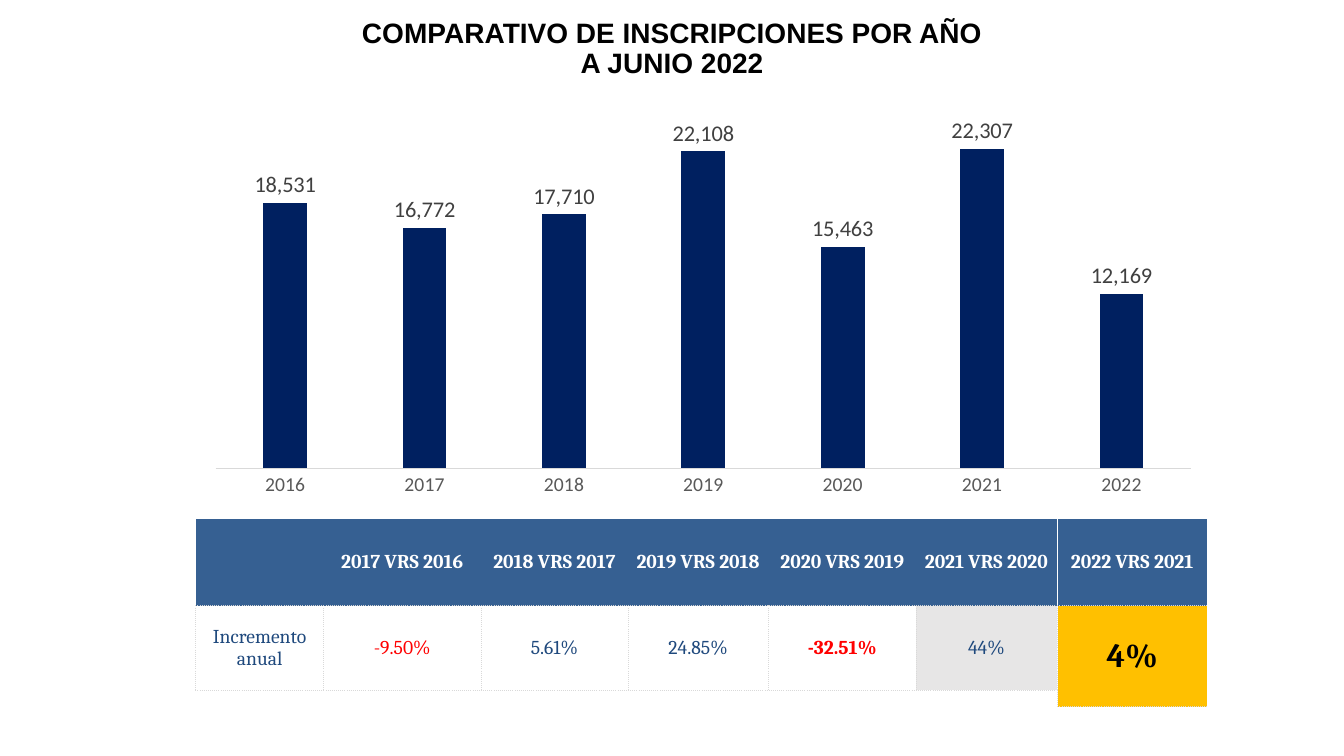
from lxml import etree
from pptx import Presentation, util as u
from pptx.chart.data import CategoryChartData
from pptx.dml.color import RGBColor
from pptx.enum import chart as ch, text as tx
from pptx.oxml import parse_xml
from pptx.oxml.ns import qn

NAVY, BLUE, INK, RED = "002060", "366092", "1F497D", "FF0000"
WHITE, BLACK, RULE = "FFFFFF", "000000", "D9D9D9"
NS = "http://schemas.openxmlformats.org/drawingml/2006/main"
NO_STYLE = "{2D5ABB26-0587-4C30-8999-92F81FD0307C}"


def style(font, name, size, color, bold=False):
    font.name, font.size, font.bold = name, u.Pt(size), bold
    font.color.rgb = RGBColor.from_string(color)


def put(cell, words, color, bold, fill, sides, size=14):
    """Write one table cell with dotted rules on the given sides."""
    for side in sides:
        cell._tc.get_or_add_tcPr().append(parse_xml(
            f'<a:ln{side} xmlns:a="{NS}" w="6350"><a:solidFill><a:srgbClr val="{RULE}"/>'
            f'</a:solidFill><a:prstDash val="sysDot"/></a:ln{side}>'))
    if fill:
        cell.fill.solid()
        cell.fill.fore_color.rgb = RGBColor.from_string(fill)
    else:
        cell.fill.background()
    cell.margin_left = cell.margin_right = cell.margin_top = cell.margin_bottom = 0
    cell.vertical_anchor = tx.MSO_ANCHOR.MIDDLE
    if words:
        par = cell.text_frame.paragraphs[0]
        par.alignment = tx.PP_ALIGN.CENTER
        run = par.add_run()
        run.text = words
        style(run.font, "Cambria", size, color, bold)


deck = Presentation()
deck.slide_width, deck.slide_height = u.Inches(13.33), u.Inches(7.5)
slide = deck.slides.add_slide(deck.slide_layouts[5])

# Title
title = slide.shapes.title
title.left, title.top = u.Inches(1.5), u.Inches(0.14)
title.width, title.height = u.Inches(10.33), u.Inches(0.47)
frame = title.text_frame
frame.vertical_anchor = tx.MSO_ANCHOR.TOP
frame.auto_size = tx.MSO_AUTO_SIZE.NONE
par = frame.paragraphs[0]
par.alignment, par.line_spacing = tx.PP_ALIGN.CENTER, 0.9
for num, line in enumerate(["COMPARATIVO DE INSCRIPCIONES POR AÑO", "A JUNIO 2022"]):
    if num:
        par.add_line_break()
    run = par.add_run()
    run.text = line
    style(run.font, "Arial", 20, BLACK, True)

# Enrolments per year
data = CategoryChartData(number_format="#,##0")
data.categories = [str(year) for year in range(2016, 2023)]
data.add_series("Inscripciones", [18531, 16772, 17710, 22108, 15463, 22307, 12169])
chart = slide.shapes.add_chart(
    ch.XL_CHART_TYPE.COLUMN_CLUSTERED, u.Inches(1.52), u.Inches(0.8),
    u.Inches(10.3), u.Inches(4.18), data).chart
chart.has_legend = chart.has_title = False
style(chart.font, "Calibri", 10, BLACK)

years = chart.category_axis
years.major_tick_mark = ch.XL_TICK_MARK.NONE
years.format.line.color.rgb = RGBColor.from_string(RULE)
years.format.line.width = u.Pt(0.75)
style(years.tick_labels.font, "Calibri", 14, "595959")
scale = chart.value_axis
scale.minimum_scale, scale.maximum_scale = 0, 25000
scale.has_major_gridlines = scale.visible = False

plot = chart.plots[0]
plot.gap_width, plot.overlap, plot.vary_by_categories = 219, -27, False
bars = plot.series[0]
bars.format.fill.solid()
bars.format.fill.fore_color.rgb = RGBColor.from_string(NAVY)
tags = bars.data_labels
tags.show_value = True
tags.number_format, tags.number_format_is_linked = "#,##0", False
tags.position = ch.XL_LABEL_POSITION.OUTSIDE_END
style(tags.font, "Calibri", 16, "404040")

area = chart._chartSpace.chart.plotArea
for old in area.findall(qn("c:layout")):
    area.remove(old)
layout = etree.Element(qn("c:layout"))
manual = etree.SubElement(layout, qn("c:manualLayout"))
for key, val in [("layoutTarget", "inner"), ("xMode", "edge"), ("yMode", "edge"),
                 ("x", 0.06), ("y", 0.07), ("w", 0.94), ("h", 0.85)]:
    etree.SubElement(manual, qn("c:" + key)).set("val", str(val))
area.insert(0, layout)

# Yearly change: the main table, and the current year set apart
ALL, OPEN = "LRTB", "LTB"
past = [
    (1.27, "", ("Incremento anual", INK, False, None, ALL)),
    (1.56, "2017 VRS 2016", ("-9.50%", RED, False, None, ALL)),
    (1.46, "2018 VRS 2017", ("5.61%", INK, False, None, ALL)),
    (1.39, "2019 VRS 2018", ("24.85%", INK, False, None, ALL)),
    (1.47, "2020 VRS 2019", ("-32.51%", RED, True, None, ALL)),
    (1.39, "2021 VRS 2020", ("44%", INK, False, "E7E6E6", OPEN)),
]
last = [(1.48, "2022 VRS 2021", ("4%", BLACK, True, "FFC000", OPEN, 24))]
for left, cols, rows in [(1.94, past, (0.86, 0.84)), (10.49, last, (0.86, 1))]:
    grid = slide.shapes.add_table(
        2, len(cols), u.Inches(left), u.Inches(5.15),
        u.Inches(sum(col[0] for col in cols)), u.Inches(sum(rows))).table
    grid._tbl.tblPr.find(qn("a:tableStyleId")).text = NO_STYLE
    for row, height in zip(grid.rows, rows):
        row.height = u.Inches(height)
    for num, (width, head, body) in enumerate(cols):
        grid.columns[num].width = u.Inches(width)
        put(grid.cell(0, num), head, WHITE, True, BLUE, "B")
        put(grid.cell(1, num), *body)

deck.save("out.pptx")
